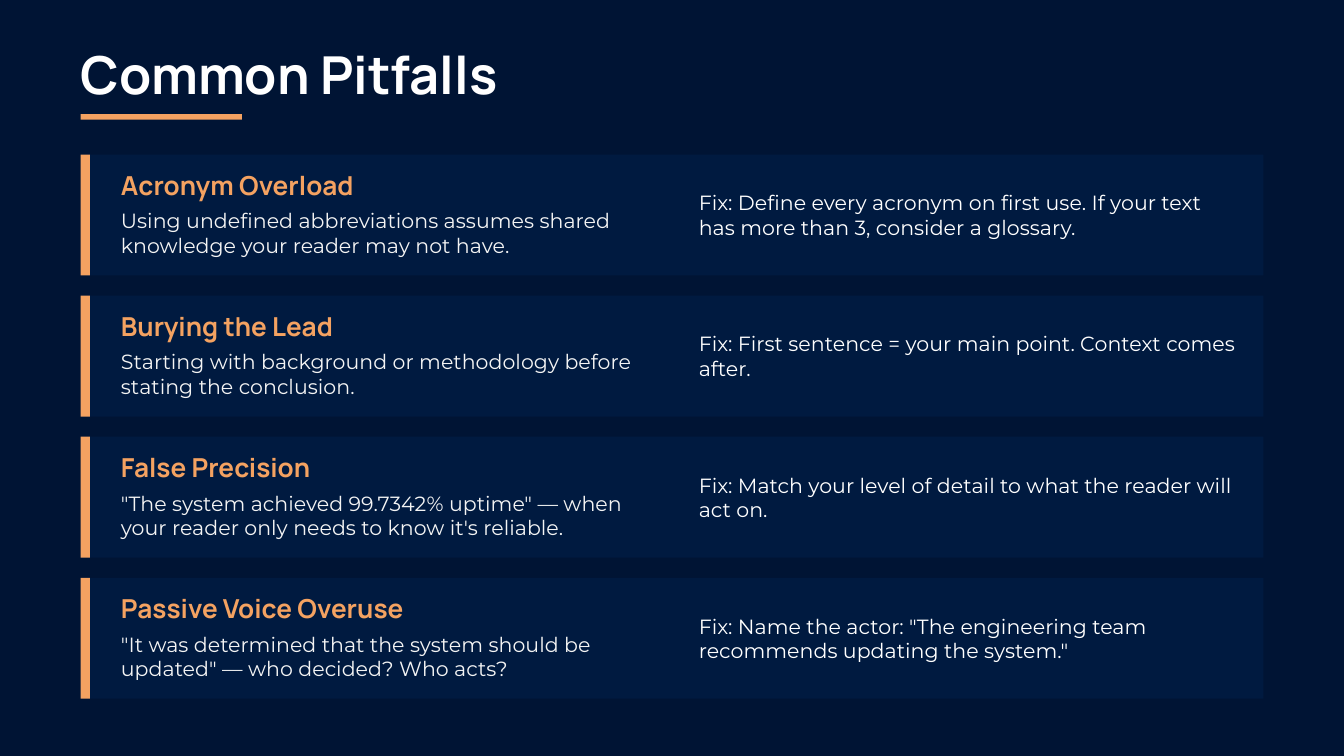
from dataclasses import dataclass

from pptx import Presentation
from pptx import util as u
from pptx.dml.color import RGBColor
from pptx.enum import shapes, text

NAVY = RGBColor(0x00, 0x14, 0x34)
PANEL = RGBColor(0x00, 0x1A, 0x40)
ORANGE = RGBColor(0xF4, 0xA2, 0x61)
WHITE = RGBColor(0xFF, 0xFF, 0xFF)
OFF_WHITE = RGBColor(0xF4, 0xF4, 0xF4)

HEADING_FONT = "Manrope"
BODY_FONT = "Montserrat"

PAGE_WIDTH = 10
PAGE_HEIGHT = PAGE_WIDTH * 9 / 16
LEFT = 0.6
FIRST_TOP = 1.15
CARD_HEIGHT = 0.9
CARD_STEP = 1.05


@dataclass(frozen=True)
class Pitfall:
    name: str
    problem: str
    fix: str
    problem_width: float = 4.2


PITFALLS = [
    Pitfall("Acronym Overload",
            "Using undefined abbreviations assumes shared knowledge your reader may not have.",
            "Fix: Define every acronym on first use. If your text has more than 3, "
            "consider a glossary."),
    Pitfall("Burying the Lead",
            "Starting with background or methodology before stating the conclusion.",
            "Fix: First sentence = your main point. Context comes after."),
    Pitfall("False Precision",
            '"The system achieved 99.7342% uptime" — when your reader only needs '
            "to know it's reliable.",
            "Fix: Match your level of detail to what the reader will act on.",
            problem_width=3.9),
    Pitfall("Passive Voice Overuse",
            '"It was determined that the system should be updated" — who decided? Who acts?',
            'Fix: Name the actor: "The engineering team recommends updating the system."'),
]


def add_bar(page, left: float, top: float, width: float, height: float,
            color: RGBColor) -> None:
    bar = page.shapes.add_shape(shapes.MSO_SHAPE.RECTANGLE, u.Inches(left), u.Inches(top),
                                u.Inches(width), u.Inches(height))
    bar.shadow.inherit = False
    bar.fill.solid()
    bar.fill.fore_color.rgb = color
    bar.line.fill.background()


def write_text(box, words: str, *, font: str, size: float, color: RGBColor,
               bold: bool = False, anchor=text.MSO_ANCHOR.MIDDLE) -> None:
    frame = box.text_frame
    frame.word_wrap = True
    frame.auto_size = text.MSO_AUTO_SIZE.NONE
    frame.vertical_anchor = anchor
    frame.margin_left = frame.margin_right = frame.margin_top = frame.margin_bottom = 0
    para = frame.paragraphs[0]
    para.alignment = text.PP_ALIGN.LEFT
    span = para.add_run()
    span.text = words
    span.font.name = font
    span.font.size = u.Pt(size)
    span.font.bold = bold
    span.font.color.rgb = color


def add_text(page, left: float, top: float, width: float, height: float,
             words: str, **style) -> None:
    box = page.shapes.add_textbox(u.Inches(left), u.Inches(top),
                                  u.Inches(width), u.Inches(height))
    write_text(box, words, **style)


def add_card(page, pitfall: Pitfall, top: float) -> None:
    # Panel with its accent edge
    add_bar(page, LEFT, top, 8.8, CARD_HEIGHT, PANEL)
    add_bar(page, LEFT, top, 0.07, CARD_HEIGHT, ORANGE)
    # Pitfall on the left, fix on the right
    add_text(page, 0.9, top + 0.05, 3, 0.35, pitfall.name,
             font=HEADING_FONT, size=14, color=ORANGE, bold=True)
    add_text(page, 0.9, top + 0.4, pitfall.problem_width, 0.4, pitfall.problem,
             font=BODY_FONT, size=11, color=OFF_WHITE, anchor=text.MSO_ANCHOR.TOP)
    add_text(page, 5.2, top + 0.1, 4, 0.7, pitfall.fix,
             font=BODY_FONT, size=11, color=WHITE)


def main() -> None:
    deck = Presentation()
    deck.slide_width, deck.slide_height = u.Inches(PAGE_WIDTH), u.Inches(PAGE_HEIGHT)
    page = deck.slides.add_slide(deck.slide_layouts.get_by_name("Title Only"))
    page.background.fill.solid()
    page.background.fill.fore_color.rgb = NAVY

    # Title and underline
    title = page.shapes.title
    title.left, title.top = u.Inches(LEFT), u.Inches(0.3)
    title.width, title.height = u.Inches(5), u.Inches(0.5)
    write_text(title, "Common Pitfalls", font=HEADING_FONT, size=28, color=WHITE, bold=True)
    add_bar(page, LEFT, 0.85, 1.2, 0.04, ORANGE)

    # Pitfall cards
    for row, pitfall in enumerate(PITFALLS):
        add_card(page, pitfall, FIRST_TOP + row * CARD_STEP)

    deck.save("out.pptx")


if __name__ == "__main__":
    main()
